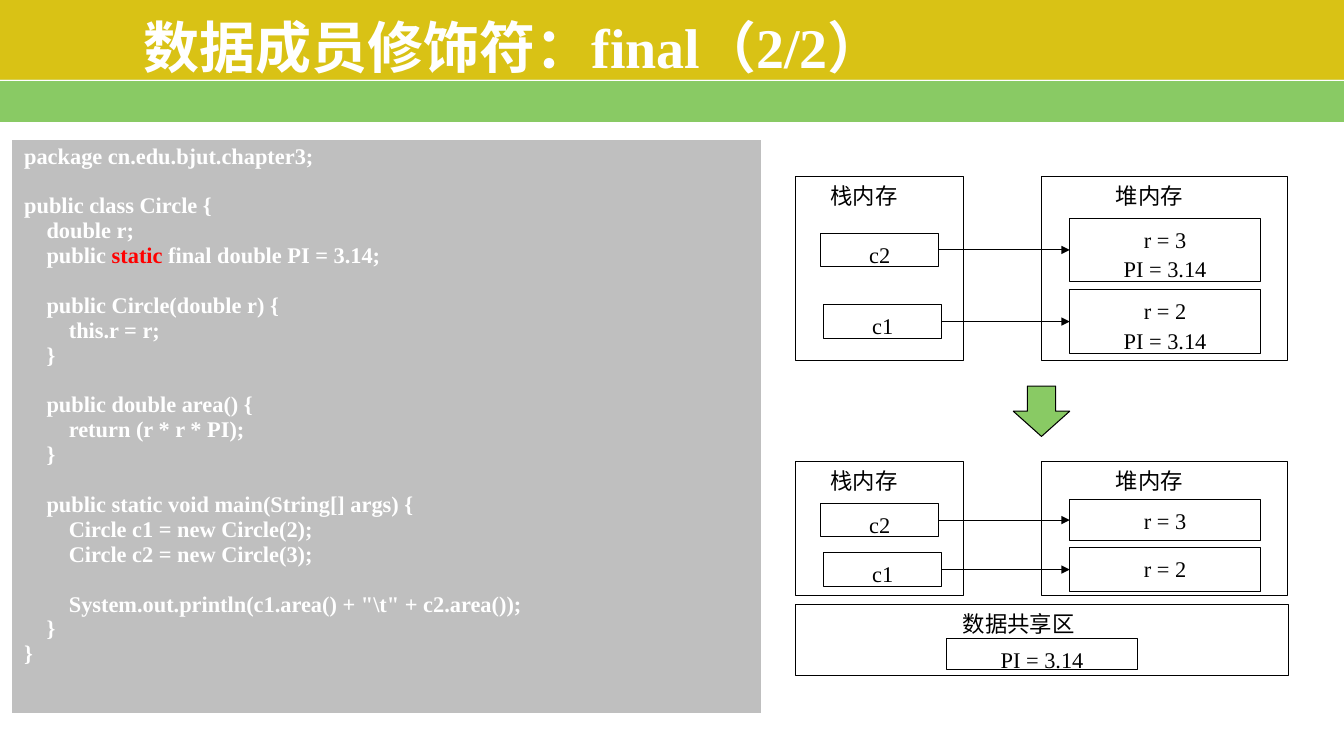
from lxml.etree import SubElement
from pptx import Presentation
from pptx.dml.color import RGBColor
from pptx.enum.shapes import MSO_CONNECTOR, MSO_SHAPE
from pptx.enum.text import MSO_ANCHOR, PP_ALIGN
from pptx.oxml.ns import qn
from pptx.util import Inches, Pt

GOLD = RGBColor(0xD9, 0xC2, 0x15)
GREEN = RGBColor(0x89, 0xCA, 0x64)
GRAY = RGBColor(0xBF, 0xBF, 0xBF)
WHITE = RGBColor(0xFF, 0xFF, 0xFF)
BLACK = RGBColor(0, 0, 0)
RED = RGBColor(0xFF, 0, 0)
LATIN, HAN = "Times New Roman", "Noto Sans CJK SC"
WIDTH, HEIGHT = 13.33, 7.5
RIGHT_SIDE, LEFT_SIDE = 3, 1

CODE = r"""package cn.edu.bjut.chapter3;

public class Circle {
    double r;
    public static final double PI = 3.14;

    public Circle(double r) {
        this.r = r;
    }

    public double area() {
        return (r * r * PI);
    }

    public static void main(String[] args) {
        Circle c1 = new Circle(2);
        Circle c2 = new Circle(3);

        System.out.println(c1.area() + "\t" + c2.area());
    }
}"""


def style_span(span, size, color, bold=False, latin=LATIN):
    """Format one run, with the Han font for East Asian characters."""
    font = span.font
    font.size, font.bold, font.name = Pt(size), bold, latin
    font.color.rgb = color
    SubElement(span._r.get_or_add_rPr(), qn("a:ea")).set("typeface", HAN)


def add_box(shapes, left, top, width, height, fill=WHITE, outline=BLACK,
            text="", kind=MSO_SHAPE.RECTANGLE):
    """Add a flat shape with optional centred lines of text."""
    box = shapes.add_shape(kind, Inches(left), Inches(top), Inches(width), Inches(height))
    box.shadow.inherit = False
    box.fill.solid()
    box.fill.fore_color.rgb = fill
    if outline is None:
        box.line.fill.background()
    else:
        box.line.color.rgb = outline
        box.line.width = Pt(0.75)
    if text:
        frame = box.text_frame
        frame.text = text
        frame.vertical_anchor = MSO_ANCHOR.TOP
        for para in frame.paragraphs:
            para.alignment = PP_ALIGN.CENTER
            para.line_spacing = 1.1
            style_span(para.runs[0], 16, BLACK)
    return box


def add_label(shapes, left, top, width, text):
    """Add the heading of a memory area."""
    label = shapes.add_textbox(Inches(left), Inches(top), Inches(width), Inches(0.37))
    label.text_frame.word_wrap = False
    label.text_frame.text = text
    style_span(label.text_frame.paragraphs[0].runs[0], 16, BLACK, latin=HAN)


def add_line(shapes, start, end, color, width):
    """Add a straight line without a shadow."""
    line = shapes.add_connector(MSO_CONNECTOR.STRAIGHT, *map(Inches, start + end))
    line.line.color.rgb = color
    line.line.width = Pt(width)
    SubElement(line._element.spPr, qn("a:effectLst"))
    return line


def add_reference(shapes, variable, instance):
    """Draw an arrow from a stack variable to its heap object."""
    arrow = add_line(shapes, (0, 0), (0, 0), BLACK, 0.75)
    arrow.begin_connect(variable, RIGHT_SIDE)
    arrow.end_connect(instance, LEFT_SIDE)
    SubElement(arrow.line._get_or_add_ln(), qn("a:tailEnd")).set("type", "triangle")


def add_header(page, title):
    """Draw the two colour bands and the title."""
    add_box(page.shapes, 0, 0.79, WIDTH, 0.42, GREEN, None)
    add_box(page.shapes, 0, 0, WIDTH, 0.79, GOLD, None)
    add_line(page.shapes, (0, 0.8), (WIDTH, 0.8), WHITE, 1)
    box = page.shapes.add_textbox(Inches(1.33), Inches(0.19), Inches(10.33), Inches(0.53))
    frame = box.text_frame
    frame.word_wrap = True
    frame.vertical_anchor = MSO_ANCHOR.MIDDLE
    frame.text = title
    style_span(frame.paragraphs[0].runs[0], 40, WHITE, bold=True)


def add_code(page, left, top, width, height):
    """Place the listing in a one-cell table with its keyword in red."""
    table = page.shapes.add_table(1, 1, Inches(left), Inches(top),
                                  Inches(width), Inches(height)).table
    cell = table.cell(0, 0)
    cell.fill.solid()
    cell.fill.fore_color.rgb = GRAY
    cell.margin_left = cell.margin_right = Inches(0.13)
    cell.text_frame.text = CODE
    for para in cell.text_frame.paragraphs:
        if not para.runs:
            ending = para._p.get_or_add_endParaRPr()
            ending.set("sz", "1600")
            SubElement(ending, qn("a:latin")).set("typeface", LATIN)
            continue
        line = para.text
        if "static final" in line:
            before, keyword, after = line.partition("static")
            para.runs[0].text = before
            for part in (keyword, after):
                para.add_run().text = part
        for span in para.runs:
            style_span(span, 16, RED if span.text == "static" else WHITE, bold=True)


def add_memory(page, left, top, height, rows):
    """Draw stack and heap side by side; rows hold centre, object height and text."""
    shapes = page.shapes.add_group_shape().shapes
    add_box(shapes, left, top, 1.67, height)
    add_label(shapes, left + 0.25, top + 0.01, 0.88, "栈内存")
    add_box(shapes, left + 2.44, top, 2.44, height)
    add_label(shapes, left + 3.08, top + 0.01, 0.88, "堆内存")
    for (name, indent), (middle, tall, text) in zip((("c2", 0.25), ("c1", 0.28)), rows):
        variable = add_box(shapes, left + indent, top + middle - 0.165, 1.17, 0.33, text=name)
        instance = add_box(shapes, left + 2.72, top + middle - tall / 2, 1.89, tall, text=text)
        add_reference(shapes, variable, instance)
    return shapes


def add_shared_area(shapes, left, top):
    """Draw the shared data area holding the constant."""
    add_box(shapes, left, top, 4.89, 0.7)
    add_label(shapes, left + 1.56, top, 1.32, "数据共享区")
    add_box(shapes, left + 1.5, top + 0.33, 1.89, 0.31, text="PI = 3.14")


def main():
    """Build and save the slide."""
    deck = Presentation()
    deck.slide_width, deck.slide_height = Inches(WIDTH), Inches(HEIGHT)
    page = deck.slides.add_slide(deck.slide_layouts[6])
    add_header(page, "数据成员修饰符：final（2/2）")
    add_code(page, 0.11, 1.38, 7.44, 5.25)
    add_memory(page, 7.89, 1.75, 1.83,
               [(0.73, 0.63, "r = 3\nPI = 3.14"), (1.44, 0.63, "r = 2\nPI = 3.14")])
    shared = add_memory(page, 7.89, 4.58, 1.33, [(0.58, 0.4, "r = 3"), (1.07, 0.44, "r = 2")])
    add_shared_area(shared, 7.89, 6)
    add_box(page.shapes, 10.05, 3.83, 0.56, 0.5, GREEN, kind=MSO_SHAPE.DOWN_ARROW)
    deck.save("out.pptx")


if __name__ == "__main__":
    main()
